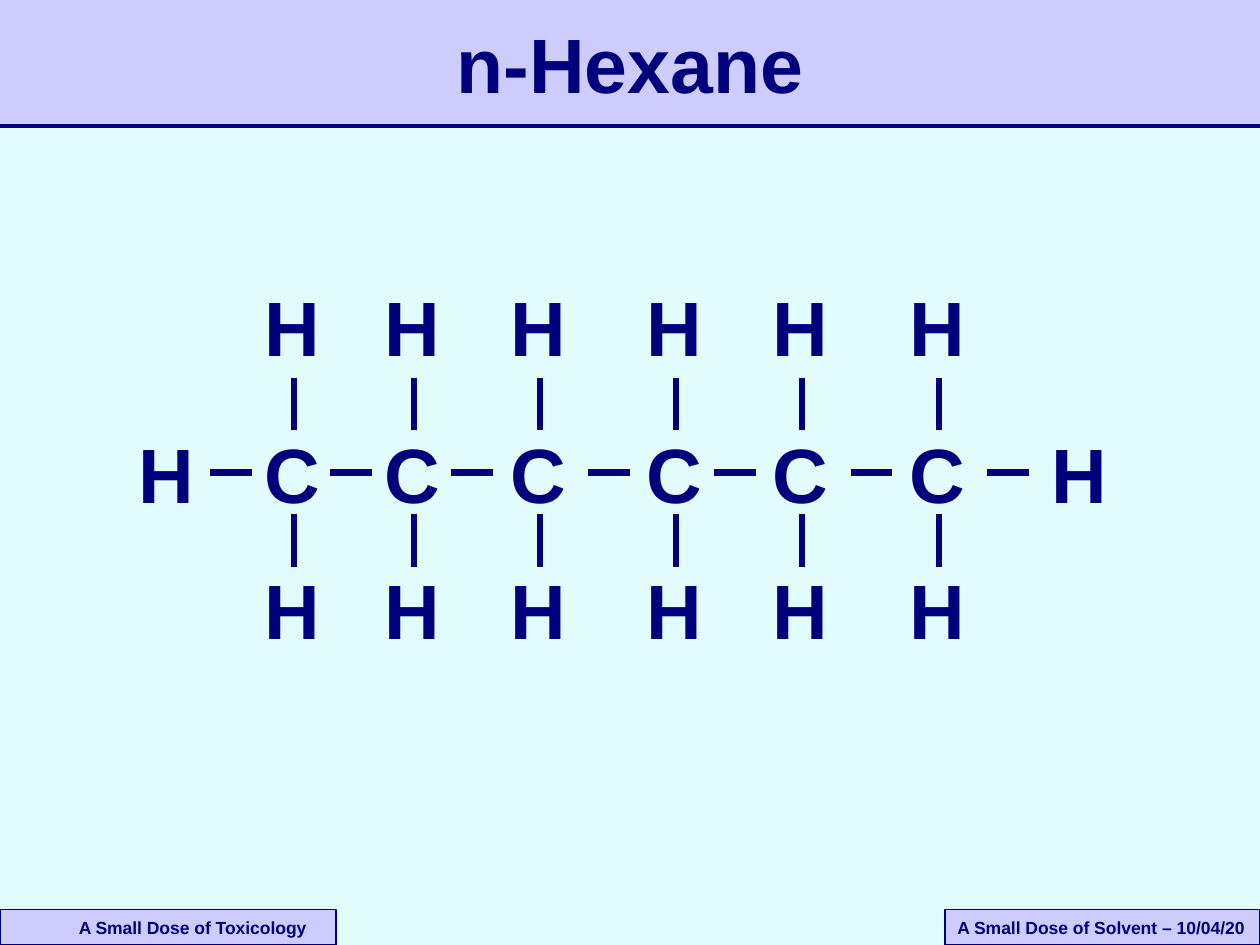
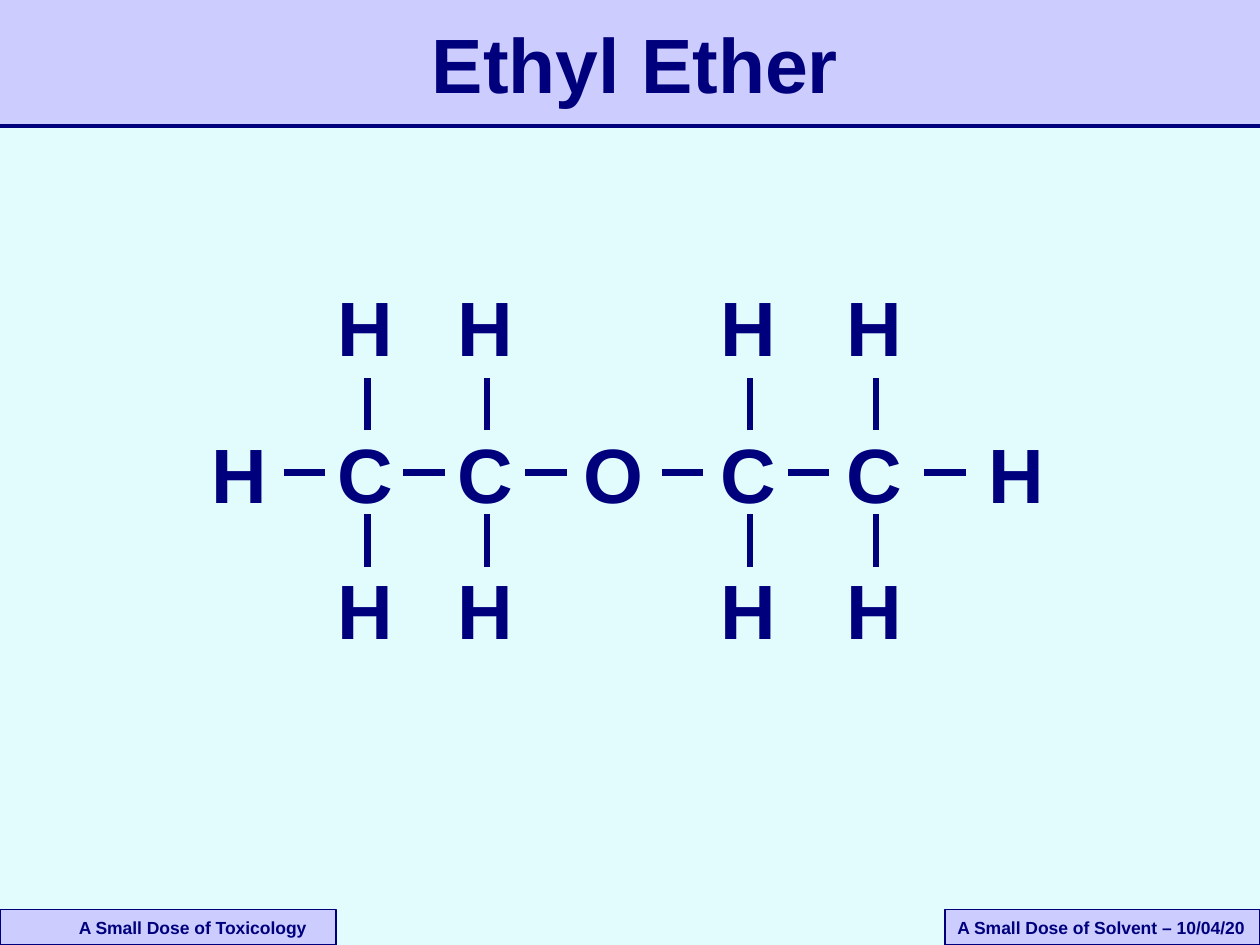
from dataclasses import dataclass

from pptx import Presentation
from pptx.dml.color import RGBColor
from pptx.enum.shapes import MSO_CONNECTOR, MSO_SHAPE
from pptx.enum.text import MSO_ANCHOR, PP_ALIGN
from pptx.oxml import parse_xml
from pptx.oxml.ns import nsdecls
from pptx.util import Inches, Pt

COLORS = {"page": "E2FCFE", "band": "CCCCFF", "ink": "00007D"}
FONT = "Arial"

# Grid: 120 columns by 90 rows on a 10 x 7.5 inch slide
CELL = Inches(10) // 120
COLUMNS, ROWS = 120, 90

LETTER_HEIGHT = 10
WIDTHS = {"H": 9, "C": 9.6, "O": 9.6}
BOND = 4            # length of a chain bond, and offset of the vertical bonds
CHAIN_ROW, CHAIN_BOND_ROW = 14, 19
# Hydrogen row, its box width, and the rows its bond runs between
BRANCHES = [(0, 7, 15, 10), (27, 8, 28, 23)]


@dataclass
class Box:
    left: float
    top: float
    width: float
    height: float

    def emu(self):
        return [round(n * CELL) for n in (self.left, self.top, self.width, self.height)]


# Each chain atom: symbol, step from the atom before, lead of the bond before it
HEXANE = [("H", 0, 0), ("C", 12, 4), ("C", 11.4, 4), ("C", 12, 4.4), ("C", 13, 4.4),
          ("C", 12, 4.4), ("C", 13, 4.4), ("H", 13.6, 5)]
ETHER = [("H", 0, 0), ("C", 12, 4), ("C", 11.4, 4), ("O", 12, 4.4), ("C", 13, 4.4),
         ("C", 12, 4.4), ("H", 13.6, 5)]

MOLECULES = [
    ("n-Hexane", Box(9, 1, 102, LETTER_HEIGHT), HEXANE, Box(12, 26, 96, 37)),
    ("Ethyl Ether", Box(17, 1, 87, LETTER_HEIGHT), ETHER, Box(19, 26, 83, 37)),
]
FOOTERS = [
    ("A Small Dose of Solvent – 10/04/20", Box(90, 86.64, 30, 3.36), 1.2),
    ("A Small Dose of Toxicology", Box(0, 86.64, 32, 3.36), 7.5),
]


def color(name):
    return RGBColor.from_string(COLORS[name])


def write(frame, text, size, align=PP_ALIGN.LEFT):
    frame.word_wrap = True
    paragraph = frame.paragraphs[0]
    paragraph.text = text
    paragraph.alignment = align
    font = paragraph.font
    font.name, font.size, font.bold = FONT, Pt(size), True
    font.color.rgb = color("ink")


def add_panel(shapes, box):
    panel = shapes.add_shape(MSO_SHAPE.RECTANGLE, *box.emu())
    panel.shadow.inherit = False
    panel.fill.solid()
    panel.fill.fore_color.rgb = color("band")
    panel.line.fill.background()
    return panel


def add_rule(shapes, x1, y1, x2, y2, weight):
    ends = [round(n * CELL) for n in (x1, y1, x2, y2)]
    rule = shapes.add_connector(MSO_CONNECTOR.STRAIGHT, *ends)
    rule.line.color.rgb = color("ink")
    rule.line.width = Pt(weight)
    rule._element.spPr.append(parse_xml(f"<a:effectLst {nsdecls('a')}/>"))


def add_header(slide, title, title_box, band):
    add_panel(slide.shapes, band)
    bottom = band.top + band.height
    add_rule(slide.shapes, band.left, bottom, band.left + band.width, bottom, 2)
    frame = slide.shapes.add_textbox(*title_box.emu()).text_frame
    frame.vertical_anchor = MSO_ANCHOR.MIDDLE
    write(frame, title, 44, PP_ALIGN.CENTER)


def add_footer(slide, text, box, inset):
    panel = add_panel(slide.shapes, box)
    panel.line.color.rgb = color("ink")
    panel.line.width = Pt(0.75)
    frame = panel.text_frame
    frame.margin_left, frame.margin_right = round(inset * CELL), 0
    frame.vertical_anchor = MSO_ANCHOR.MIDDLE
    write(frame, text, 10)


def add_atom(shapes, symbol, left, top, width):
    box = Box(left, top, width, LETTER_HEIGHT)
    write(shapes.add_textbox(*box.emu()).text_frame, symbol, 44)


def add_molecule(slide, chain, box):
    """Draw a chain of atoms from the left of the box, hydrogens above and below each C."""
    shapes = slide.shapes.add_group_shape().shapes
    left = box.left
    for symbol, step, lead in chain:
        left += step
        add_atom(shapes, symbol, left, box.top + CHAIN_ROW, WIDTHS[symbol])
        if lead:
            bond_y = box.top + CHAIN_BOND_ROW
            add_rule(shapes, left - lead, bond_y, left - lead + BOND, bond_y, 3.5)
        if symbol == "C":
            for row, width, start, end in BRANCHES:
                add_atom(shapes, "H", left, box.top + row, width)
                add_rule(shapes, left + BOND, box.top + start,
                         left + BOND, box.top + end, 3.5)


def add_molecule_slide(deck, title, title_box, chain, chain_box):
    slide = deck.slides.add_slide(deck.slide_layouts[6])
    slide.background.fill.solid()
    slide.background.fill.fore_color.rgb = color("page")
    add_header(slide, title, title_box, Box(0, 0, COLUMNS, 12))
    for footer in FOOTERS:
        add_footer(slide, *footer)
    add_molecule(slide, chain, chain_box)


def main():
    deck = Presentation()
    deck.slide_width, deck.slide_height = COLUMNS * CELL, ROWS * CELL
    for molecule in MOLECULES:
        add_molecule_slide(deck, *molecule)
    deck.save("out.pptx")


if __name__ == "__main__":
    main()
